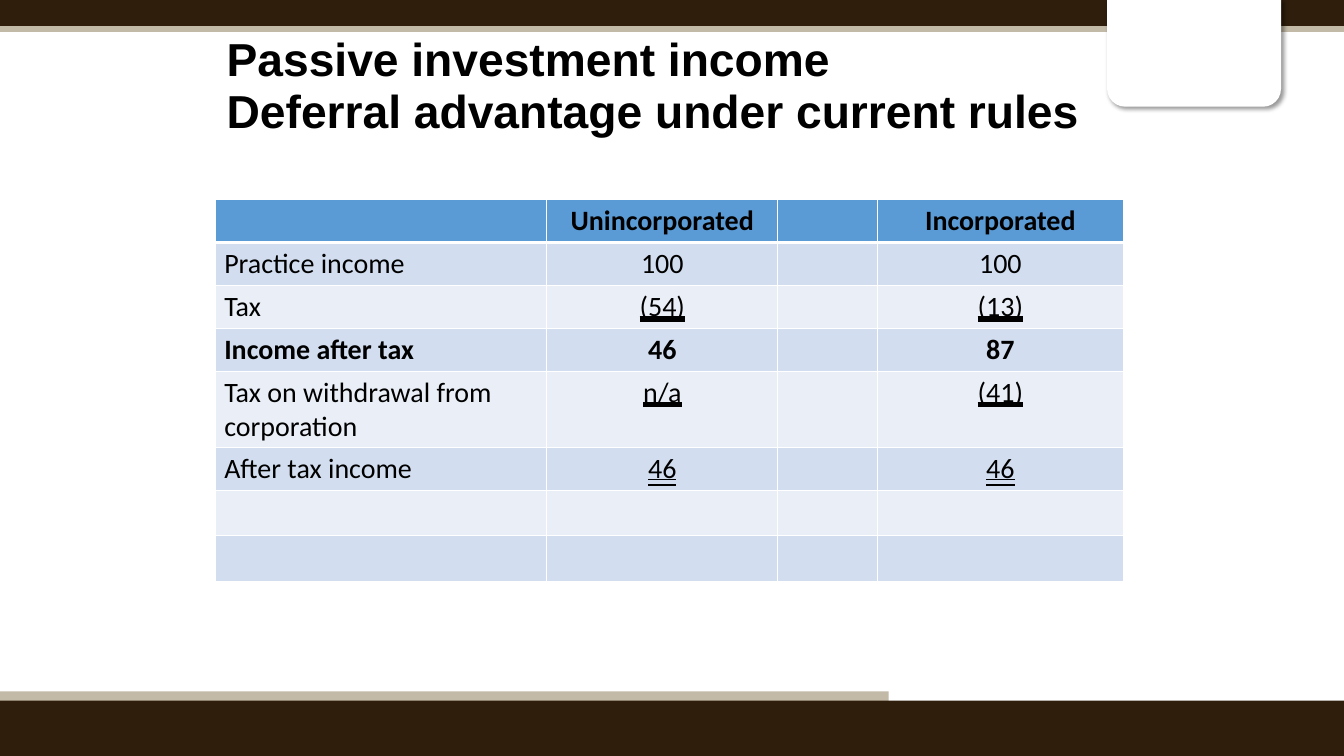
import pptx
import pptx.util
import pptx.dml.color
import pptx.enum.shapes
import pptx.enum.text
import pptx.oxml
import pptx.oxml.ns
import lxml.etree

Inches, Pt = pptx.util.Inches, pptx.util.Pt
UNDERLINE = pptx.enum.text.MSO_UNDERLINE
SHAPE = pptx.enum.shapes.MSO_SHAPE

COLORS = {"tan": "C2B9A6", "brown": "2F1E0C", "white": "FFFFFF", "black": "000000",
          "header": "5B9BD5", "band_dark": "D2DEEF", "band_light": "EAEFF7"}

TITLE = ["Passive investment income", "Deferral advantage under current rules"]

# label, unincorporated, incorporated, bold, underline of the figures, row height
ROWS = [
    ("", "Unincorporated", "Incorporated", True, None, 0.51),
    ("Practice income", "100", "100", False, None, 0.51),
    ("Tax", "(54)", "(13)", False, UNDERLINE.HEAVY_LINE, 0.51),
    ("Income after tax", "46", "87", True, None, 0.51),
    ("Tax on withdrawal from corporation", "n/a", "(41)", False, UNDERLINE.HEAVY_LINE, 0.91),
    ("After tax income", "46", "46", False, UNDERLINE.DOUBLE_LINE, 0.51),
    ("", "", "", False, None, 0.54),
    ("", "", "", False, None, 0.54),
]
COL_WIDTHS = [3.94, 2.75, 1.19, 2.92]

# left, top, width, height, colour
BANDS = [
    (0, 0.3, 16, 0.08, "tan"),
    (0, 0, 16, 0.31, "brown"),
    (0, 8.23, 10.58, 0.17, "tan"),
    (0, 8.34, 16, 0.66, "brown"),
]


def rgb(name):
    return pptx.dml.color.RGBColor.from_string(COLORS[name])


def add_block(kind, left, top, width, height, color):
    sp = slide.shapes.add_shape(kind, Inches(left), Inches(top), Inches(width), Inches(height))
    sp.shadow.inherit = False
    sp.fill.solid()
    sp.fill.fore_color.rgb = rgb(color)
    sp.line.fill.background()
    return sp


def add_shadow(sp):
    effects = sp._element.spPr.find(pptx.oxml.ns.qn("a:effectLst"))
    effects.append(pptx.oxml.parse_xml(
        f'<a:outerShdw {pptx.oxml.ns.nsdecls("a")} blurRad="{Pt(4)}" dist="{Pt(3)}" '
        f'dir="2700000" rotWithShape="0"><a:srgbClr val="{COLORS["black"]}">'
        '<a:alpha val="40000"/></a:srgbClr></a:outerShdw>'))


def set_borders(cell, widths):
    tc_pr = cell._tc.get_or_add_tcPr()
    for i, (side, width) in enumerate(widths.items()):
        tc_pr.insert(i, pptx.oxml.parse_xml(
            f'<a:{side} {pptx.oxml.ns.nsdecls("a")} w="{Pt(width)}"><a:solidFill>'
            f'<a:srgbClr val="{COLORS["white"]}"/></a:solidFill></a:{side}>'))


def style_run(r, font, size, bold):
    r.font.name, r.font.size, r.font.bold = font, Pt(size), bold
    r.font.color.rgb = rgb("black")


prs = pptx.Presentation()
prs.slide_width, prs.slide_height = Inches(16), Inches(9)
slide = prs.slides.add_slide(prs.slide_layouts[6])

# Bands at the top and bottom, and the white tab
for *box, color in BANDS:
    add_block(SHAPE.RECTANGLE, *box, color)
tab = add_block(SHAPE.ROUND_2_SAME_RECTANGLE, 13.18, -0.01, 2.07, 1.28, "white")
tab.rotation = 180
add_shadow(tab)

# Title
tf = slide.shapes.add_textbox(Inches(2.6), Inches(0.37), Inches(10.6), Inches(1.3)).text_frame
tf.word_wrap = True
p = tf.paragraphs[0]
p.text = "\v".join(TITLE)
p.line_spacing = 0.94
for r in p.runs:
    style_run(r, "Arial", 39.6, True)

# Table
table = slide.shapes.add_table(
    len(ROWS), len(COL_WIDTHS), Inches(2.57), Inches(2.38),
    Inches(sum(COL_WIDTHS)), Inches(sum(row[-1] for row in ROWS))).table
for column, width in zip(table.columns, COL_WIDTHS):
    column.width = Inches(width)

for i, (label, unincorporated, incorporated, bold, underline, height) in enumerate(ROWS):
    table.rows[i].height = Inches(height)
    fill = "header" if i == 0 else "band_dark" if i % 2 else "band_light"
    for j, text in enumerate([label, unincorporated, "", incorporated]):
        cell = table.cell(i, j)
        cell.fill.solid()
        cell.fill.fore_color.rgb = rgb(fill)
        set_borders(cell, {"lnL": 1, "lnR": 1, "lnT": 3 if i == 1 else 1, "lnB": 3 if i == 0 else 1})
        p = cell.text_frame.paragraphs[0]
        p.text = text
        if j:
            p.alignment = pptx.enum.text.PP_ALIGN.CENTER
        for r in p.runs:
            style_run(r, "Calibri", 24, bold)
            if j and underline:
                r.font.underline = underline

prs.save("out.pptx")
